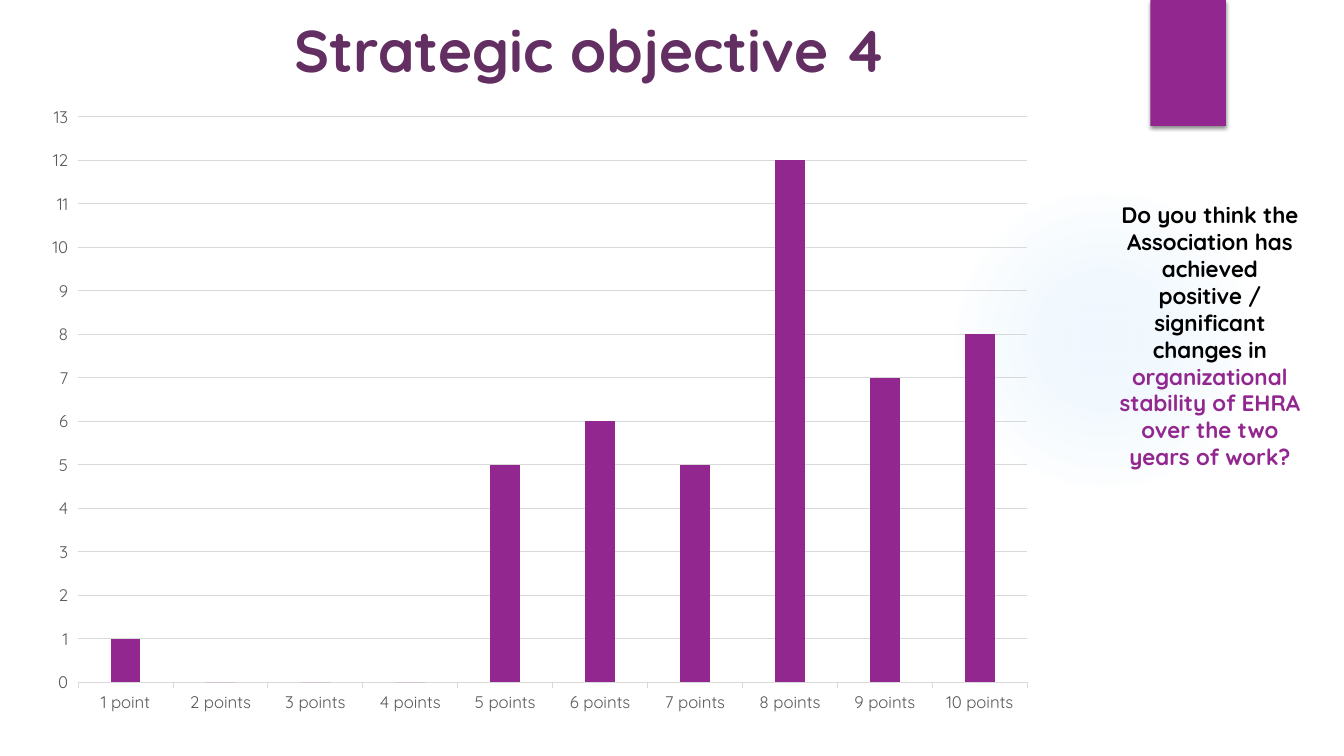
from lxml import etree
from pptx import Presentation
from pptx.chart.data import CategoryChartData
from pptx.dml.color import RGBColor
from pptx.enum.chart import XL_CHART_TYPE, XL_TICK_MARK
from pptx.enum.shapes import MSO_SHAPE
from pptx.enum.text import MSO_ANCHOR, MSO_AUTO_SIZE, PP_ALIGN
from pptx.oxml import parse_xml
from pptx.util import Pt

PX = 9144
FONT = "Quicksand"
COLORS = {
    "purple": "92278F",
    "title": "632E62",
    "glow": "45A5ED",
    "black": "000000",
    "axis": "595959",
    "grid": "D9D9D9",
}
NS = 'xmlns:a="http://schemas.openxmlformats.org/drawingml/2006/main"'
COLUMN = XL_CHART_TYPE.COLUMN_CLUSTERED
TICK_OUT = XL_TICK_MARK.OUTSIDE
TICK_NONE = XL_TICK_MARK.NONE
CENTER = PP_ALIGN.CENTER
MIDDLE = MSO_ANCHOR.MIDDLE
TOP = MSO_ANCHOR.TOP


def px(*lengths):
    return [n * PX for n in lengths]


def style(font, size, color, bold=False):
    font.name = FONT
    font.size = Pt(size)
    font.bold = bold
    font.color.rgb = RGBColor.from_string(COLORS[color])


prs = Presentation()
prs.slide_width, prs.slide_height = px(1333, 750)
s = prs.slides.add_slide(prs.slide_layouts[6])

glow = s.shapes.add_shape(MSO_SHAPE.OVAL, *px(941, 183, 308, 308))
glow.shadow.inherit = False
glow.line.fill.background()
stops = "".join(
    f'<a:gs pos="{pos * 1000}"><a:srgbClr val="{COLORS["glow"]}">'
    f'<a:alpha val="{alpha * 1000}"/></a:srgbClr></a:gs>'
    for pos, alpha in [(0, 7), (36, 6), (69, 0)]
)
glow.fill.background()
no_fill = glow._element.spPr.find("{*}noFill")
no_fill.getparent().replace(no_fill, parse_xml(
    f'<a:gradFill {NS} rotWithShape="1"><a:gsLst>{stops}</a:gsLst><a:path path="circle">'
    '<a:fillToRect l="50000" t="50000" r="50000" b="50000"/></a:path></a:gradFill>'
))

tab = s.shapes.add_shape(MSO_SHAPE.RECTANGLE, *px(1141, 0, 75, 125))
tab.shadow.inherit = False
tab.fill.solid()
tab.fill.fore_color.rgb = RGBColor.from_string(COLORS["purple"])
tab.line.fill.background()
effects = tab._element.spPr.find("{*}effectLst")
effects.append(etree.fromstring(
    f'<a:outerShdw {NS} blurRad="{Pt(3)}" dist="{Pt(2)}" dir="5400000" rotWithShape="0">'
    f'<a:srgbClr val="{COLORS["black"]}"><a:alpha val="45000"/></a:srgbClr></a:outerShdw>'
))

data = CategoryChartData()
data.categories = ["1 point"] + [f"{n} points" for n in range(2, 11)]
data.add_series("Series 1", [1, 0, 0, 0, 5, 6, 5, 12, 7, 8])
chart = s.shapes.add_chart(COLUMN, *px(32, 93, 1007, 627), data).chart
style(chart.font, 10, "black")
chart.has_legend = False
chart.has_title = False
plot = chart.plots[0]
plot.vary_by_categories = False
plot.gap_width = 219
plot.overlap = -27
bars = plot.series[0].format.fill
bars.solid()
bars.fore_color.rgb = RGBColor.from_string(COLORS["purple"])

cat_axis, val_axis = chart.category_axis, chart.value_axis
for axis in (cat_axis, val_axis):
    style(axis.tick_labels.font, 12, "axis")
    axis.major_tick_mark = TICK_OUT
    axis.minor_tick_mark = TICK_NONE
val_axis.minimum_scale = 0
val_axis.maximum_scale = 13
val_axis.major_unit = 1
val_axis.has_major_gridlines = True
val_axis.format.line.fill.background()
for line in (cat_axis.format.line, val_axis.major_gridlines.format.line):
    line.color.rgb = RGBColor.from_string(COLORS["grid"])
    line.width = Pt(0.75)

texts = [
    ((71, 6, 1029, 86), MIDDLE, 42, [("Strategic objective 4", "title")]),
    ((1099, 195, 202, 279), TOP, 16, [
        ("Do you think the Association has achieved positive / significant changes in ", "black"),
        ("organizational stability of EHRA over the two years of work?", "purple"),
    ]),
]
for box, anchor, size, runs in texts:
    tf = s.shapes.add_textbox(*px(*box)).text_frame
    tf.word_wrap = True
    tf.auto_size = MSO_AUTO_SIZE.NONE
    tf.vertical_anchor = anchor
    p = tf.paragraphs[0]
    p.alignment = CENTER
    for text, color in runs:
        r = p.add_run()
        r.text = text
        style(r.font, size, color, True)

prs.save("out.pptx")
